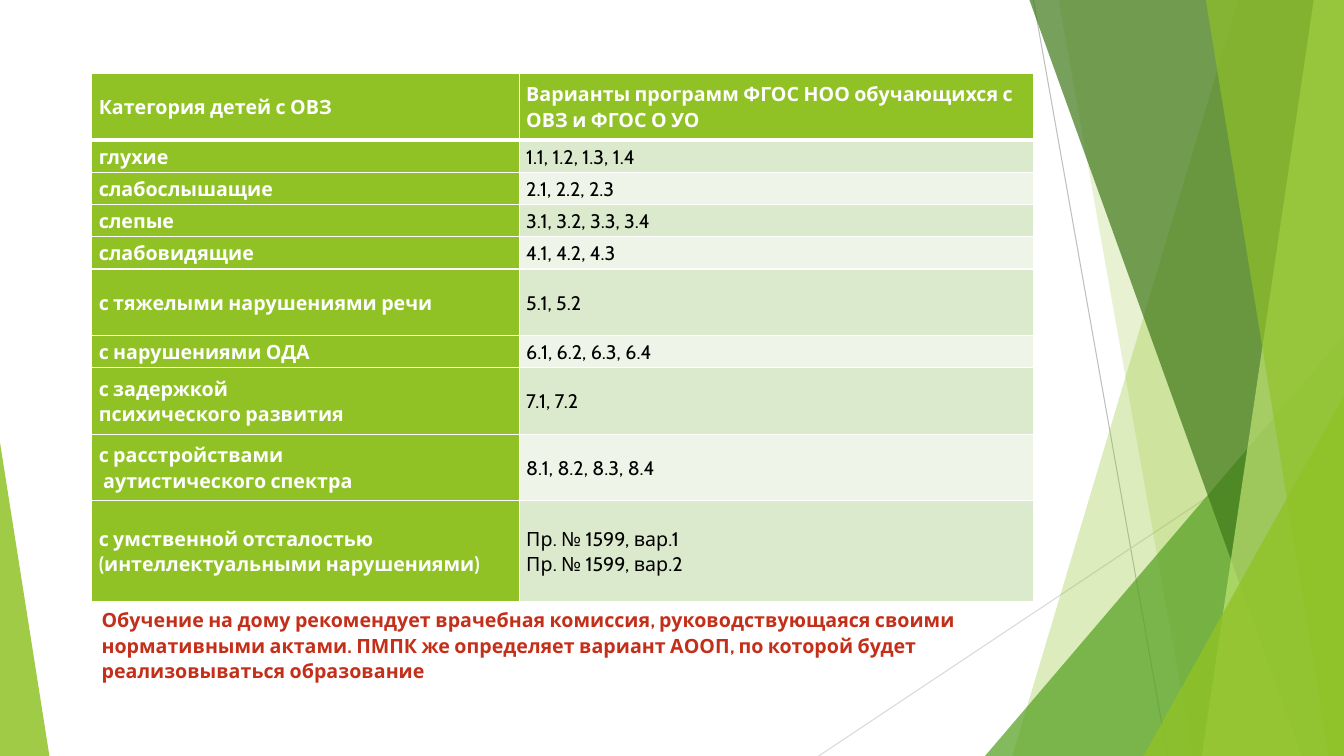
from lxml import etree
from pptx import Presentation
from pptx.dml.color import RGBColor
from pptx.enum import shapes, text
from pptx.oxml.ns import qn
from pptx.util import Inches, Pt

WHITE = RGBColor(0xFF, 0xFF, 0xFF)
BLACK = RGBColor(0, 0, 0)
RED = RGBColor(0xC4, 0x2F, 0x1A)
LIME = RGBColor(0x90, 0xC2, 0x26)
GREEN = RGBColor(0x54, 0xA0, 0x21)
DARK = RGBColor(0x3F, 0x78, 0x19)
PALE = RGBColor(0xC0, 0xE4, 0x74)
BANDS = [RGBColor(0xDB, 0xE9, 0xCD), RGBColor(0xEE, 0xF4, 0xE8)]
GREY = RGBColor(0xBF, 0xBF, 0xBF)
LIGHT_GREY = RGBColor(0xD9, 0xD9, 0xD9)

ROWS = [
    (0.66, "Категория детей с ОВЗ", "Варианты программ ФГОС НОО обучающихся с ОВЗ и ФГОС О УО"),
    (0.32, "глухие", "1.1, 1.2, 1.3, 1.4"),
    (0.32, "слабослышащие", "2.1, 2.2, 2.3"),
    (0.32, "слепые", "3.1, 3.2, 3.3, 3.4"),
    (0.32, "слабовидящие", "4.1, 4.2, 4.3"),
    (0.66, "с тяжелыми нарушениями речи", "5.1, 5.2"),
    (0.32, "с нарушениями ОДА", "6.1, 6.2, 6.3, 6.4"),
    (0.66, "с задержкой\nпсихического развития", "7.1, 7.2"),
    (0.66, "с расстройствами\n аутистического спектра", "8.1, 8.2, 8.3, 8.4"),
    (1, "с умственной отсталостью (интеллектуальными нарушениями)",
     "Пр. № 1599, вар.1\nПр. № 1599, вар.2"),
]
NOTE = ("Обучение на дому рекомендует врачебная комиссия, руководствующаяся своими "
        "нормативными актами. ПМПК же определяет вариант АООП, по которой будет "
        "реализовываться образование")


def write(tf, content, color=BLACK, bold=False, size=14, font="Cabin"):
    tf.word_wrap = True
    for i, line in enumerate(content.split("\n")):
        p = tf.paragraphs[0] if i == 0 else tf.add_paragraph()
        p.line_spacing = 1.07
        r = p.add_run()
        r.text = line
        r.font.name, r.font.size = font, Pt(size)
        r.font.bold, r.font.color.rgb = bold, color


def paint(sp, color, opacity):
    sp.shadow.inherit = False
    sp.line.fill.background()
    sp.fill.solid()
    sp.fill.fore_color.rgb = color
    clr = sp.fill._xPr.find(qn("a:solidFill"))[0]
    etree.SubElement(clr, qn("a:alpha"), val=str(opacity * 1000))


def line(s, x1, y1, x2, y2, color):
    cn = s.shapes.add_connector(shapes.MSO_CONNECTOR.STRAIGHT,
                                Inches(x1), Inches(y1), Inches(x2), Inches(y2))
    cn.line.color.rgb, cn.line.width = color, Pt(0.75)
    etree.SubElement(cn._element.spPr, qn("a:effectLst"))


def wedge(s, right, y, h, top, bottom, color, opacity):
    fb = s.shapes.build_freeform(Inches(right - top), Inches(y), scale=1.0)
    fb.add_line_segments([(Inches(px), Inches(py)) for px, py in
                          [(right, y), (right, y + h), (right - bottom, y + h)]])
    paint(fb.convert_to_shape(), color, opacity)


def triangle(s, x, bottom, w, h, apex, color, opacity):
    sp = s.shapes.add_shape(shapes.MSO_SHAPE.ISOSCELES_TRIANGLE,
                            Inches(x), Inches(bottom - h), Inches(w), Inches(h))
    sp.adjustments[0] = apex
    paint(sp, color, opacity)


def facets(s, x, y, w, h):
    right, bottom = x + w, y + h
    line(s, right - 3.08, y, right - 1.75, bottom, GREY)
    line(s, right, y + 4.03, x, bottom, LIGHT_GREY)
    wedge(s, right, y, h, 1.05, 3.29, LIME, 30)
    wedge(s, right, y, h, 2.83, 1.5, LIME, 20)
    triangle(s, right - 3.56, bottom, 3.56, 4.17, 1, GREEN, 72)
    wedge(s, right, y, h, 3.12, 0.42, DARK, 70)
    wedge(s, right, y, h, 0.3, 1.41, PALE, 70)
    wedge(s, right, y, h, 1.37, 0.15, LIME, 65)
    triangle(s, right - 1.99, bottom, 1.99, 3.57, 1, LIME, 80)


def borders(cell, bottom, top):
    tcPr = cell._tc.get_or_add_tcPr()
    for side, width in (("L", 1), ("R", 1), ("T", top), ("B", bottom)):
        ln = etree.SubElement(tcPr, qn("a:ln" + side), w=str(Pt(width)))
        fill = etree.SubElement(ln, qn("a:solidFill"))
        etree.SubElement(fill, qn("a:srgbClr"), val=str(WHITE))


def programme_table(s, x, y, w, h):
    tbl = s.shapes.add_table(len(ROWS), 2, Inches(x), Inches(y), Inches(w), Inches(h)).table
    tbl.columns[0].width = Inches(4.24)
    tbl.columns[1].width = Inches(w - 4.24)
    for i, (height, *values) in enumerate(ROWS):
        tbl.rows[i].height = Inches(height)
        for j, value in enumerate(values):
            cell = tbl.cell(i, j)
            strong = i == 0 or j == 0
            cell.margin_left = cell.margin_right = Inches(0.07)
            cell.margin_top = cell.margin_bottom = 0
            cell.vertical_anchor = text.MSO_ANCHOR.MIDDLE
            borders(cell, bottom=3 if i == 0 else 1, top=3 if i == 1 else 1)
            cell.fill.solid()
            cell.fill.fore_color.rgb = LIME if strong else BANDS[(i - 1) % 2]
            write(cell.text_frame, value, WHITE if strong else BLACK, strong)


def note(s, x, y, w, h):
    tb = s.shapes.add_textbox(Inches(x), Inches(y), Inches(w), Inches(h))
    write(tb.text_frame, NOTE, RED, True)


def main():
    prs = Presentation()
    prs.slide_width, prs.slide_height = Inches(13.33), Inches(7.5)
    s = prs.slides.add_slide(prs.slide_layouts[6])
    facets(s, 8.12, 0, 5.21, 7.5)
    triangle(s, 0, 7.5, 0.49, 3.11, 0, LIME, 85)
    programme_table(s, 0.91, 0.73, 9.34, 5.24)
    note(s, 0.91, 5.97, 9.34, 0.86)
    prs.save("out.pptx")


if __name__ == "__main__":
    main()
